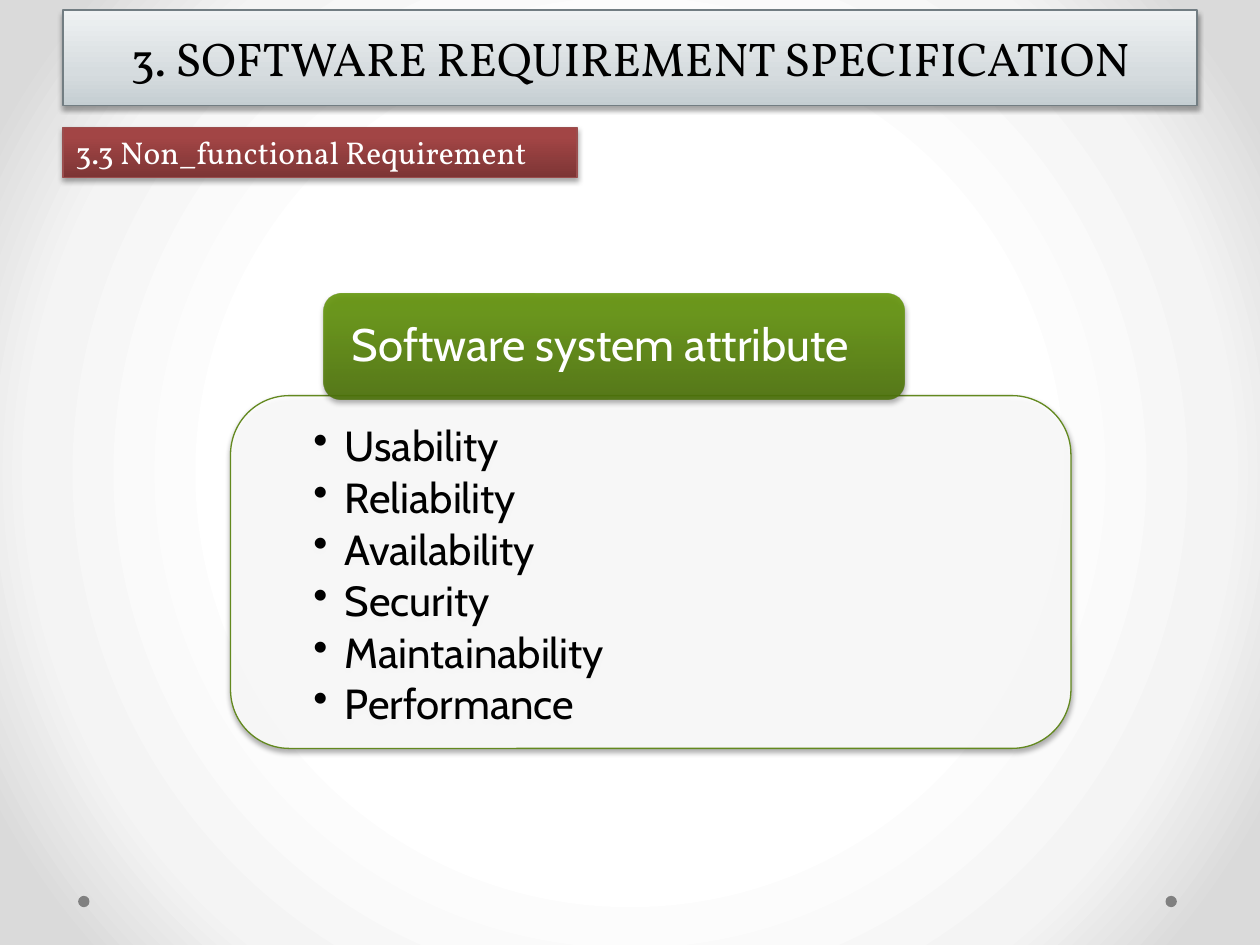
"""Build the non-functional requirements slide."""
from lxml.etree import SubElement
from pptx import Presentation
from pptx.dml.color import RGBColor
from pptx.enum.shapes import MSO_SHAPE as Shape
from pptx.enum.text import MSO_ANCHOR as Anchor, MSO_AUTO_SIZE as AutoSize, PP_ALIGN as Align
from pptx.oxml.ns import qn
from pptx.util import Inches, Pt

TITLE = "3. SOFTWARE REQUIREMENT SPECIFICATION"
SECTION = "3.3 Non_functional Requirement"
HEADING = "Software system attribute"
ATTRIBUTES = ["Usability", "Reliability", "Availability", "Security",
              "Maintainability", "Performance"]

WIDTH, HEIGHT = 10, 7.5
MARGIN = WIDTH * 0.05
DOT = 0.09
DOT_TOP = 7.11
DOT_LEFTS = [0.62, 9.25]
TITLE_BOX = (MARGIN, 0.08, WIDTH - 2 * MARGIN, 0.76)
SECTION_BOX = (MARGIN, 1.01, 4.08, 0.4)
PANEL_BOX = (1.83, 3.14, 6.67, 2.8)
HEADING_BOX = (2.57, 2.33, 4.61, 0.84)

SERIF, SANS = "Vollkorn", "Cabin"
BLACK = RGBColor(0, 0, 0)
WHITE = RGBColor(255, 255, 255)
GREY = RGBColor(0x80, 0x80, 0x80)
SLATE = RGBColor(0x72, 0x7D, 0x82)
RED = RGBColor(0x9A, 0x4E, 0x4E)
GREEN = RGBColor(0x63, 0x89, 0x1F)
PAGE_STOPS = [(50, WHITE), (76, RGBColor(0xF4, 0xF4, 0xF4)), (92, RGBColor(0xDA, 0xDA, 0xDA))]
TITLE_STOPS = [(0, RGBColor(0xC5, 0xCE, 0xD2)), (35, RGBColor(0xD6, 0xDC, 0xDF)),
               (100, RGBColor(0xEF, 0xF2, 0xF3))]
SECTION_STOPS = [(0, RGBColor(0x7D, 0x35, 0x35)), (80, RGBColor(0xA2, 0x45, 0x45)),
                 (100, RGBColor(0xA4, 0x43, 0x43))]
HEADING_STOPS = [(0, RGBColor(0x4D, 0x72, 0x0B)), (80, RGBColor(0x64, 0x94, 0x0F)),
                 (100, RGBColor(0x65, 0x97, 0x0C))]


def add(parent, tag, **attributes):
    return SubElement(parent, qn(tag), {name: str(value) for name, value in attributes.items()})


def add_color(parent, color, opacity):
    node = add(parent, "a:srgbClr", val=color)
    if opacity < 100:
        add(node, "a:alpha", val=opacity * 1000)


def set_gradient(fill, properties, stops, opacity=100, radial=False):
    fill.solid()
    solid = properties.find(qn("a:solidFill"))
    gradient = add(properties, "a:gradFill", rotWithShape=1)
    stop_list = add(gradient, "a:gsLst")
    for position, color in stops:
        add_color(add(stop_list, "a:gs", pos=position * 1000), color, opacity)
    if radial:
        center = add(gradient, "a:path", path="circle")
        add(center, "a:fillToRect", l=50000, t=50000, r=50000, b=50000)
    else:
        add(gradient, "a:lin", ang=270 * 60000, scaled=0)
    properties.replace(solid, gradient)


def set_shadow(shape):
    shape.shadow.inherit = False
    effects = shape.element.spPr.find(qn("a:effectLst"))
    shadow = add(effects, "a:outerShdw", blurRad=Pt(3.1), dist=Pt(1.8),
                 dir=90 * 60000, algn="ctr", rotWithShape=0)
    add_color(shadow, BLACK, 35)


def set_line(shape, color):
    if color is None:
        shape.line.fill.background()
    else:
        shape.line.color.rgb = color
        shape.line.width = Pt(0.75)


def add_box(page, kind, box):
    return page.shapes.add_shape(kind, *map(Inches, box))


def write(shape, lines, font, size, color, anchor, align=Align.LEFT, inset=0.1, pad=0.05):
    frame = shape.text_frame
    frame.text = "\n".join(lines)
    frame.word_wrap = True
    frame.vertical_anchor = anchor
    frame.margin_left = frame.margin_right = Inches(inset)
    frame.margin_top = frame.margin_bottom = Inches(pad)
    for para in frame.paragraphs:
        para.alignment = align
        for span in para.runs:
            span.font.name = font
            span.font.size = Pt(size)
            span.font.color.rgb = color


def add_bullets(frame):
    for para in frame.paragraphs:
        para.line_spacing = 0.9
        para.space_after = Pt(3.6)
        properties = para._p.get_or_add_pPr()
        properties.set("marL", str(Inches(0.25)))
        properties.set("indent", str(-Inches(0.25)))
        add(properties, "a:buChar", char="•")


def main():
    deck = Presentation()
    deck.slide_width, deck.slide_height = Inches(WIDTH), Inches(HEIGHT)
    page = deck.slides.add_slide(deck.slide_layouts[5])
    backdrop = page.background.fill
    backdrop.solid()
    set_gradient(backdrop, page.element.find(".//" + qn("p:bgPr")), PAGE_STOPS, radial=True)

    for left in DOT_LEFTS:
        dot = add_box(page, Shape.OVAL, (left, DOT_TOP, DOT, DOT))
        dot.shadow.inherit = False
        dot.fill.solid()
        dot.fill.fore_color.rgb = GREY
        set_line(dot, None)

    title = page.shapes.title
    title.left, title.top, title.width, title.height = map(Inches, TITLE_BOX)
    panel = add_box(page, Shape.ROUNDED_RECTANGLE, PANEL_BOX)
    heading = add_box(page, Shape.ROUNDED_RECTANGLE, HEADING_BOX)
    section = add_box(page, Shape.RECTANGLE, SECTION_BOX)

    for shape, stops, opacity, line in [(title, TITLE_STOPS, 100, SLATE),
                                        (panel, [(0, WHITE), (100, WHITE)], 90, GREEN),
                                        (heading, HEADING_STOPS, 90, None),
                                        (section, SECTION_STOPS, 100, RED)]:
        if shape is panel:
            shape.fill.solid()
            shape.fill.fore_color.rgb = WHITE
            tint = shape.element.spPr.find(qn("a:solidFill")).find(qn("a:srgbClr"))
            add(tint, "a:alpha", val=opacity * 1000)
        else:
            set_gradient(shape.fill, shape.element.spPr, stops, opacity)
        set_line(shape, line)
        set_shadow(shape)

    write(title, [TITLE], SERIF, 27, BLACK, Anchor.MIDDLE, Align.CENTER)
    title.text_frame.auto_size = AutoSize.NONE
    write(section, [SECTION], SERIF, 18, WHITE, Anchor.TOP)
    section.text_frame.auto_size = AutoSize.SHAPE_TO_FIT_TEXT
    write(heading, [HEADING], SANS, 26, WHITE, Anchor.MIDDLE, inset=0.18, pad=0.1)
    heading.text_frame.paragraphs[0].line_spacing = 0.9
    write(panel, ATTRIBUTES, SANS, 24, BLACK, Anchor.TOP, inset=0.52, pad=0.1)
    add_bullets(panel.text_frame)
    deck.save("out.pptx")


if __name__ == "__main__":
    main()
